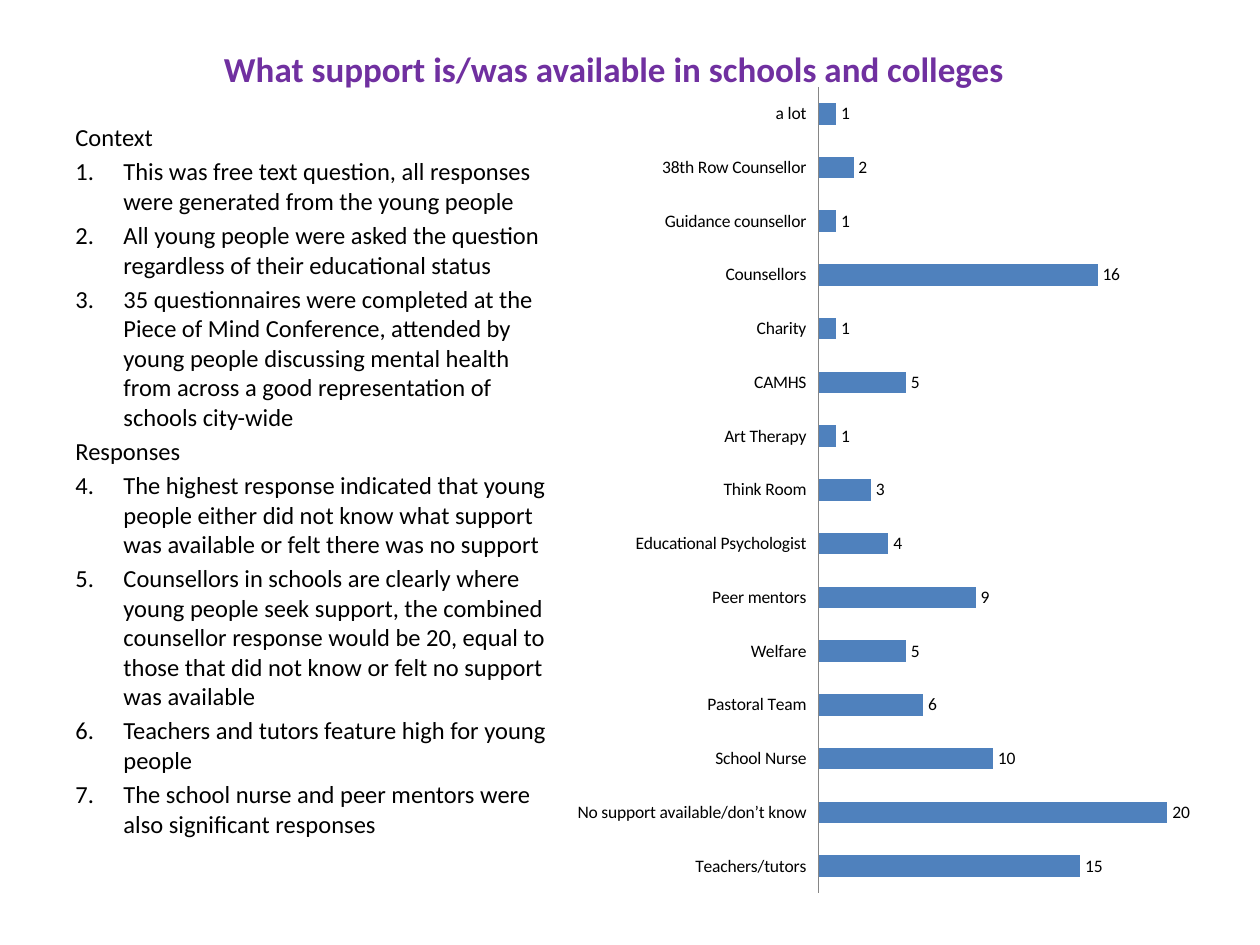
from lxml import etree
from pptx import Presentation
from pptx.chart.data import CategoryChartData
from pptx.dml.color import RGBColor
from pptx.enum.chart import XL_CHART_TYPE, XL_LABEL_POSITION, XL_TICK_LABEL_POSITION, XL_TICK_MARK
from pptx.enum.text import MSO_ANCHOR, PP_ALIGN
from pptx.oxml.ns import qn
from pptx.util import Emu, Pt

BAR_CLUSTERED = XL_CHART_TYPE.BAR_CLUSTERED
OUTSIDE_END = XL_LABEL_POSITION.OUTSIDE_END
LABELS_LOW = XL_TICK_LABEL_POSITION.LOW
NO_TICK = XL_TICK_MARK.NONE
BOTTOM, TOP = MSO_ANCHOR.BOTTOM, MSO_ANCHOR.TOP
CENTER, LEFT = PP_ALIGN.CENTER, PP_ALIGN.LEFT

EMU_PER_PX = 914400 / 126
FONT = "Calibri"
COLORS = {"title": "7030A0", "text": "000000", "bar": "4F81BD", "axis": "868686"}

TITLE = "What support is/was available in schools and colleges"
SECTIONS = [
    ("Context", [
        "This was free text question, all responses were generated from the young people",
        "All young people were asked the question regardless of their educational status",
        "35 questionnaires were completed at the Piece of Mind Conference, attended by "
        "young people discussing mental health from across a good representation of "
        "schools city-wide",
    ]),
    ("Responses", [
        "The highest response indicated that young people either did not know what support "
        "was available or felt there was no support",
        "Counsellors in schools are clearly where young people seek support, the combined "
        "counsellor response would be 20, equal to those that did not know or felt no "
        "support was available",
        "Teachers and tutors feature high for young people",
        "The school nurse and peer mentors were also significant responses",
    ]),
]
SUPPORT = {
    "Teachers/tutors": 15,
    "No support available/don’t know": 20,
    "School Nurse": 10,
    "Pastoral Team": 6,
    "Welfare": 5,
    "Peer mentors": 9,
    "Educational Psychologist": 4,
    "Think Room": 3,
    "Art Therapy": 1,
    "CAMHS": 5,
    "Charity": 1,
    "Counsellors": 16,
    "Guidance counsellor": 1,
    "38th Row Counsellor": 2,
    "a lot": 1,
}


def px(length):
    return Emu(round(length * EMU_PER_PX))


def color(name):
    return RGBColor.from_string(COLORS[name])


def style_font(font, size, color_name, bold=False):
    font.name = FONT
    font.size = Pt(size)
    font.bold = bold
    font.color.rgb = color(color_name)


def add_text_box(page, left, top, width, height, anchor):
    box = page.shapes.add_textbox(px(left), px(top), px(width), px(height))
    frame = box.text_frame
    frame.word_wrap = True
    frame.vertical_anchor = anchor
    return frame


def write_para(para, text, size, color_name, bold=False, align=LEFT):
    para.text = text
    para.alignment = align
    for span in para.runs:
        style_font(span.font, size, color_name, bold)


def number_para(para, start):
    """Give a paragraph a hanging number from a list that begins at start."""
    properties = para._p.get_or_add_pPr()
    indent = px(48)
    properties.set("marL", str(indent))
    properties.set("indent", str(-indent))
    etree.SubElement(properties, qn("a:buFont"), typeface="+mj-lt")
    etree.SubElement(properties, qn("a:buAutoNum"), type="arabicPeriod", startAt=str(start))


def add_title(page):
    frame = add_text_box(page, 63, 38, 1102, 58, BOTTOM)
    write_para(frame.paragraphs[0], TITLE, 20, "title", bold=True, align=CENTER)


def add_findings(page):
    frame = add_text_box(page, 63, 116, 508, 753, TOP)
    para = frame.paragraphs[0]
    start = 1
    for heading, points in SECTIONS:
        if start > 1:
            para = frame.add_paragraph()
        write_para(para, heading, 14, "text")
        for point in points:
            para = frame.add_paragraph()
            write_para(para, point, 14, "text")
            number_para(para, start)
        start += len(points)
    for para in frame.paragraphs:
        para.space_before = Pt(2.8)


def place_plot(chart, **fractions):
    """Fix the inner plot area, in fractions of the chart."""
    plot_area = chart._chartSpace.chart.plotArea
    for old in plot_area.findall(qn("c:layout")):
        plot_area.remove(old)
    layout = etree.Element(qn("c:layout"))
    plot_area.insert(0, layout)
    manual = etree.SubElement(layout, qn("c:manualLayout"))
    settings = {"layoutTarget": "inner", "xMode": "edge", "yMode": "edge", **fractions}
    for tag, value in settings.items():
        etree.SubElement(manual, qn("c:" + tag), val=str(value))


def add_support_chart(page):
    data = CategoryChartData()
    data.categories = list(SUPPORT)
    data.add_series("Series 1", list(SUPPORT.values()))
    frame = page.shapes.add_chart(BAR_CLUSTERED, px(512), px(0), px(748), px(945), data)
    chart = frame.chart
    chart.has_legend = False
    chart.has_title = False
    style_font(chart.font, 10, "text")

    categories = chart.category_axis
    categories.major_tick_mark = NO_TICK
    categories.minor_tick_mark = NO_TICK
    categories.tick_label_position = LABELS_LOW
    categories.format.line.color.rgb = color("axis")
    categories.format.line.width = Pt(0.75)

    values = chart.value_axis
    values.minimum_scale = 0
    values.maximum_scale = 25
    values.has_major_gridlines = False
    values.visible = False

    plot = chart.plots[0]
    plot.gap_width = 150
    plot.overlap = -25
    plot.vary_by_categories = False
    bars = plot.series[0].format
    bars.fill.solid()
    bars.fill.fore_color.rgb = color("bar")

    plot.has_data_labels = True
    labels = plot.data_labels
    labels.show_value = True
    labels.position = OUTSIDE_END
    style_font(labels.font, 10, "text")
    place_plot(chart, x=0.41, y=0.092, w=0.583, h=0.853)


def main():
    deck = Presentation()
    deck.slide_width, deck.slide_height = px(1260), px(945)
    page = deck.slides.add_slide(deck.slide_layouts[6])
    add_title(page)
    add_findings(page)
    add_support_chart(page)
    deck.save("out.pptx")


if __name__ == "__main__":
    main()
